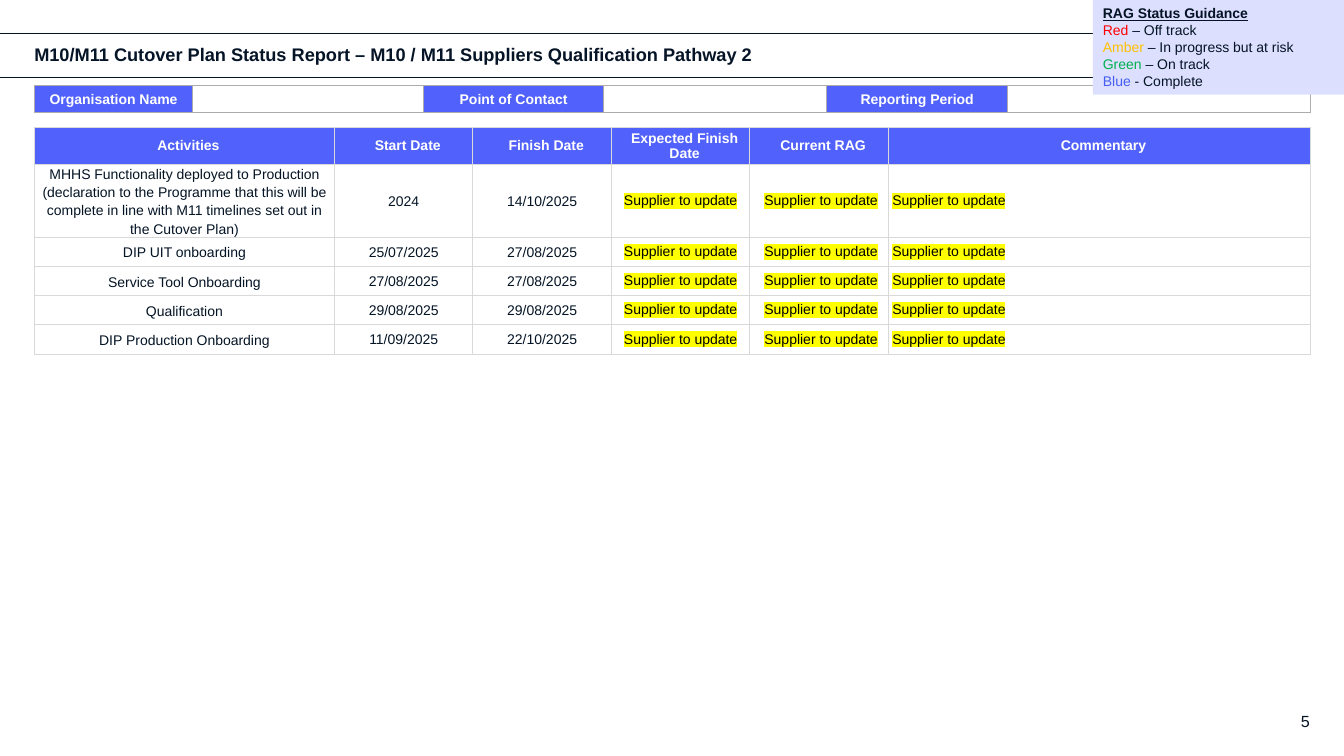
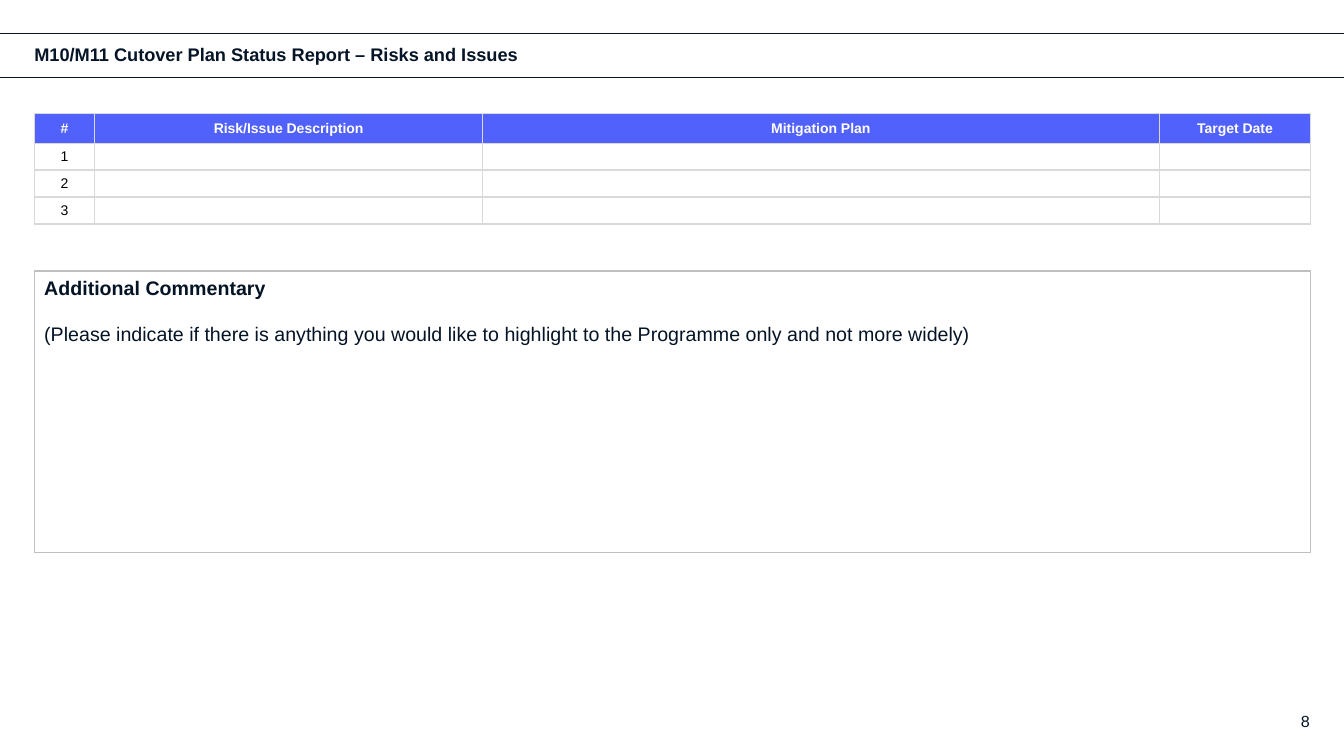
from dataclasses import dataclass

from lxml import etree
from pptx import Presentation
from pptx.dml.color import RGBColor
from pptx.enum.shapes import MSO_CONNECTOR, MSO_SHAPE
from pptx.enum.text import MSO_ANCHOR, PP_ALIGN
from pptx.oxml.ns import qn
from pptx.util import Inches, Pt

LEFT, CENTER, RIGHT = PP_ALIGN.LEFT, PP_ALIGN.CENTER, PP_ALIGN.RIGHT
TOP, MIDDLE = MSO_ANCHOR.TOP, MSO_ANCHOR.MIDDLE
RECT, STRAIGHT = MSO_SHAPE.RECTANGLE, MSO_CONNECTOR.STRAIGHT

# Shared look
W, H = 13.33, 7.5
MARGIN = 0.34
CONTENT_W = 12.66
BAND = (0.33, 0.77)
FONT = "Arial"
COLORS = {
    "ink": "041425", "title": "051426", "header": "5161FC", "white": "FFFFFF",
    "black": "000000", "grid": "D9D9D9", "info_grid": "AFABAB",
    "frame": "BFBFBF", "legend": "DCDFFE", "highlight": "FFFF00",
    "red": "FF0000", "amber": "FFC000", "green": "00B050", "blue": "455DF4",
}


@dataclass
class CellStyle:
    """Look of one kind of table cell; margins are left, top, right, bottom."""
    margins: tuple = (0.1, 0.05, 0.1, 0.05)
    align: int = CENTER
    color: str = "ink"
    bold: bool = False
    fill: str = "white"
    highlight: bool = False
    indent: float = 0
    spacing: object = None
    after: int = 0


HEAD = CellStyle(color="white", bold=True, fill="header")
INFO_HEAD = CellStyle(color="white", bold=True, fill="header", spacing=Pt(12))
PLAN_HEAD = CellStyle((0.01, 0.01, 0.01, 0), color="white", bold=True,
                      fill="header", indent=0.08)
ACTIVITY = CellStyle((0.07, 0, 0.07, 0), spacing=Pt(13), after=6)
DATE = CellStyle((0.07, 0, 0.07, 0), spacing=1.07)
FINISH = CellStyle((0.05,) * 4, color="black", highlight=True, after=2)
RAG = CellStyle((0.04, 0.04, 0, 0.04), color="black", highlight=True, after=2)
COMMENT = CellStyle((0.04, 0.04, 0, 0.04), LEFT, "black", highlight=True, after=2)
PLAIN = CellStyle(color="black")


def rgb(name):
    return RGBColor.from_string(COLORS[name])


def add_run(p, text, size, color="ink", bold=False, underline=False):
    r = p.add_run()
    r.text = text
    r.font.size, r.font.name = Pt(size), FONT
    r.font.bold, r.font.underline = bold, underline
    r.font.color.rgb = rgb(color)
    return r


def highlight_run(r):
    highlight = etree.Element(qn("a:highlight"))
    etree.SubElement(highlight, qn("a:srgbClr"), val=COLORS["highlight"])
    r.font.fill._xPr.find(qn("a:solidFill")).addnext(highlight)


# Text and shapes
def add_text(s, x, y, w, h, text, size, color="ink", bold=False, align=LEFT):
    tf = s.shapes.add_textbox(Inches(x), Inches(y), Inches(w), Inches(h)).text_frame
    tf.word_wrap = True
    tf.vertical_anchor = MIDDLE
    tf.margin_left = tf.margin_top = tf.margin_right = tf.margin_bottom = 0
    p = tf.paragraphs[0]
    p.alignment = align
    add_run(p, text, size, color, bold)
    return p


def add_panel(s, x, y, w, h, fill=None, line=None):
    sp = s.shapes.add_shape(RECT, Inches(x), Inches(y), Inches(w), Inches(h))
    sp.shadow.inherit = False
    if fill:
        sp.fill.solid()
        sp.fill.fore_color.rgb = rgb(fill)
    else:
        sp.fill.background()
    if line:
        sp.line.color.rgb = rgb(line)
        sp.line.width = Pt(1)
    else:
        sp.line.fill.background()
    tf = sp.text_frame
    tf.word_wrap = True
    tf.vertical_anchor = TOP
    return tf


def panel_paragraph(tf, first):
    p = tf.paragraphs[0] if first else tf.add_paragraph()
    p.alignment = LEFT
    return p


def add_rule(s, y):
    rule = s.shapes.add_connector(STRAIGHT, 0, Inches(y), Inches(W), Inches(y))
    rule.line.color.rgb = rgb("ink")
    rule.line.width = Pt(0.5)
    etree.SubElement(rule._element.spPr, qn("a:effectLst"))


def add_page(prs, title, title_share, number):
    s = prs.slides.add_slide(prs.slide_layouts[6])
    for y in BAND:
        add_rule(s, y)
    p = add_text(s, MARGIN, 0.44, title_share * W, 0.23, title, 13, "title", True)
    p.line_spacing = 0.9
    add_text(s, 9.99, 6.95, 3, 0.4, number, 11.5, align=RIGHT)
    return s


# Tables
def set_borders(cell, color, width):
    tcPr = cell._tc.get_or_add_tcPr()
    for side in ("lnL", "lnR", "lnT", "lnB"):
        ln = etree.SubElement(tcPr, qn(f"a:{side}"), w=str(Pt(width)))
        fill = etree.SubElement(ln, qn("a:solidFill"))
        etree.SubElement(fill, qn("a:srgbClr"), val=COLORS[color])


def fill_cell(cell, text, style, border, border_width):
    set_borders(cell, border, border_width)
    cell.fill.solid()
    cell.fill.fore_color.rgb = rgb(style.fill)
    cell.vertical_anchor = MIDDLE
    (cell.margin_left, cell.margin_top,
     cell.margin_right, cell.margin_bottom) = map(Inches, style.margins)
    p = cell.text_frame.paragraphs[0]
    p.alignment = style.align
    p.line_spacing = style.spacing
    p.space_after = Pt(style.after)
    if style.indent:
        p._p.get_or_add_pPr().set("marL", str(Inches(style.indent)))
    if text:
        r = add_run(p, text, 10, style.color, style.bold)
        if style.highlight:
            highlight_run(r)
    else:
        etree.SubElement(p._p, qn("a:endParaRPr"), sz="1000")


def add_grid(s, y, col_shares, row_heights, rows, border="grid", border_width=0.75):
    """Rows hold (text, style) pairs; columns share the content width."""
    frame = s.shapes.add_table(len(rows), len(col_shares), Inches(MARGIN), Inches(y),
                               Inches(CONTENT_W), Inches(sum(row_heights)))
    table = frame.table
    table.first_row = table.horz_banding = False
    for col, share in zip(table.columns, col_shares):
        col.width = Inches(CONTENT_W * share / sum(col_shares))
    for row, height, items in zip(table.rows, row_heights, rows):
        row.height = Inches(height)
        for cell, (text, style) in zip(row.cells, items):
            fill_cell(cell, text, style, border, border_width)


def add_legend(s):
    x = 10.84
    tf = add_panel(s, x, 0, W - x, 0.94, fill="legend")
    add_run(panel_paragraph(tf, True), "RAG Status Guidance", 10,
            bold=True, underline=True)
    for name, meaning in (("Red", " – Off track"),
                          ("Amber", " – In progress but at risk"),
                          ("Green", " – On track"),
                          ("Blue", " - Complete")):
        p = panel_paragraph(tf, False)
        add_run(p, name, 10, name.lower())
        add_run(p, meaning, 10)


# Slides
def build_status(prs):
    s = add_page(prs, "M10/M11 Cutover Plan Status Report – "
                 "M10 / M11 Suppliers Qualification Pathway 2", 0.58, "5")
    heads = ("Activities", "Start Date", "Finish Date", "Expected Finish Date",
             "Current RAG", "Commentary")
    activities = (
        ("MHHS Functionality deployed to Production (declaration to the Programme "
         "that this will be complete in line with M11 timelines set out in the "
         "Cutover Plan)", "2024", "14/10/2025"),
        ("DIP UIT onboarding", "25/07/2025", "27/08/2025"),
        ("Service Tool Onboarding", "27/08/2025", "27/08/2025"),
        ("Qualification", "29/08/2025", "29/08/2025"),
        ("DIP Production Onboarding", "11/09/2025", "22/10/2025"),
    )
    styles = (ACTIVITY, DATE, DATE, FINISH, RAG, COMMENT)
    rows = [[(head, PLAN_HEAD) for head in heads]]
    rows += [list(zip(activity + ("Supplier to update",) * 3, styles))
             for activity in activities]
    add_grid(s, 1.26, (2.97, 1.37, 1.37, 1.37, 1.37, 4.18),
             [0.37, 0.72] + [0.29] * 4, rows)

    # Report details
    details = []
    for label in ("Organisation Name", "Point of Contact", "Reporting Period"):
        details += [(label, INFO_HEAD), ("", PLAIN)]
    add_grid(s, 0.85, (1.57, 2.29, 1.78, 2.21, 1.8, 3), [0.26], [details], "info_grid")
    add_legend(s)


def build_risks(prs):
    s = add_page(prs, "M10/M11 Cutover Plan Status Report – Risks and Issues",
                 0.39, "8")
    heads = ("#", "Risk/Issue Description", "Mitigation Plan", "Target Date")
    rows = [[(head, HEAD) for head in heads]]
    rows += [[(text, PLAIN) for text in (number, "", "", "")] for number in "123"]
    add_grid(s, 1.13, (0.6, 3.84, 6.71, 1.5), [0.29] + [0.25] * 3, rows,
             border_width=1)

    # Free commentary
    tf = add_panel(s, MARGIN, 2.69, CONTENT_W, 2.79, line="frame")
    add_run(panel_paragraph(tf, True), "Additional Commentary", 14, bold=True)
    p = panel_paragraph(tf, False)
    p.space_before = Pt(16)
    add_run(p, "(Please indicate if there is anything you would like to highlight "
            "to the Programme only and not more widely)", 14)


def main():
    prs = Presentation()
    prs.slide_width, prs.slide_height = Inches(W), Inches(H)
    build_status(prs)
    build_risks(prs)
    prs.save("out.pptx")


if __name__ == "__main__":
    main()
